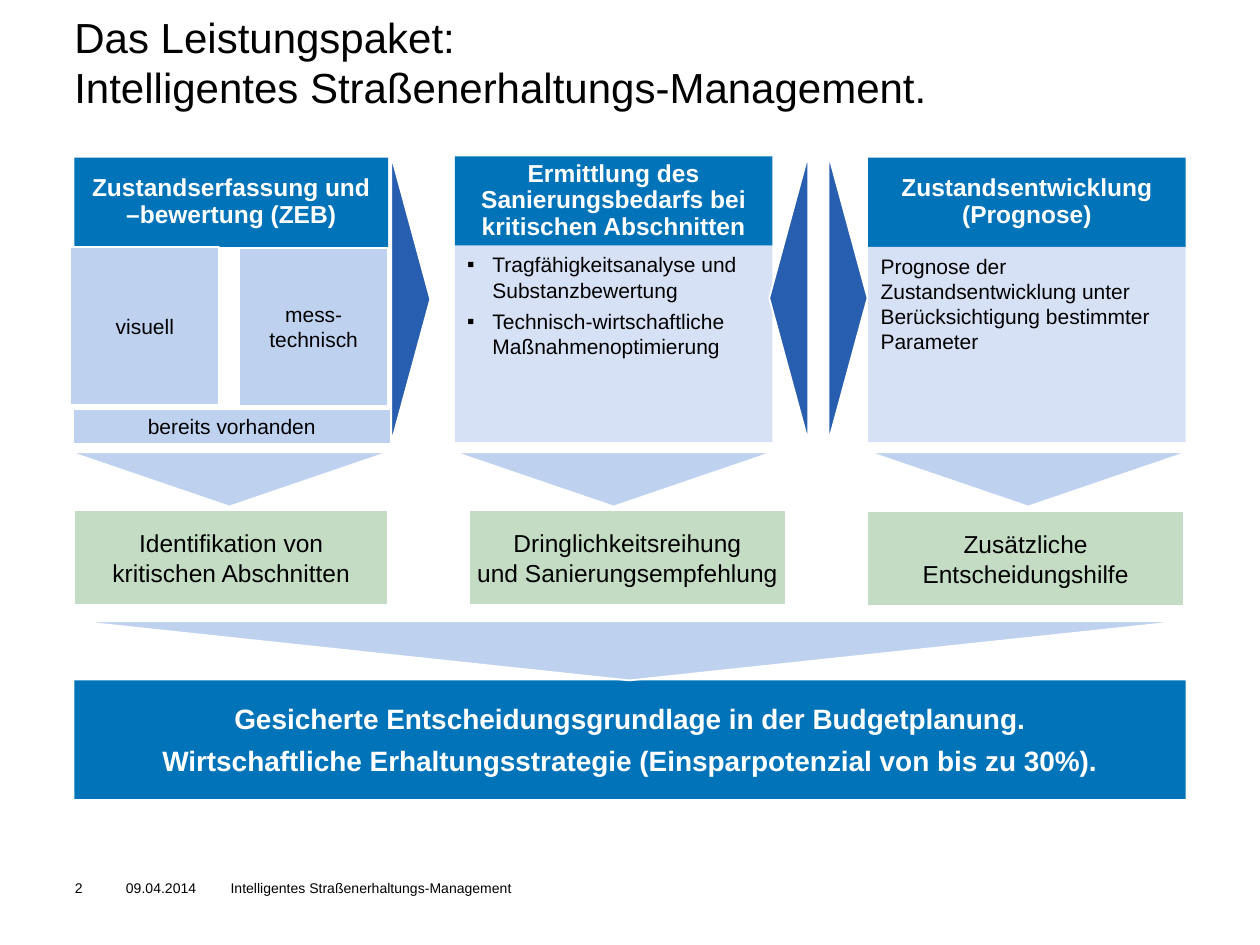
from dataclasses import dataclass

from lxml import etree
from pptx import Presentation
from pptx import util as u
from pptx.dml.color import RGBColor
from pptx.enum import shapes, text
from pptx.oxml import ns

COLS, ROWS = 100, 75
LEFT, MID, RIGHT = 5.9, 36.1, 68.9
HEAD, BODY, DOWN, GOAL, BAND, FOOT = 12.5, 19.6, 35.9, 40.5, 54, 69.4
WIDE = 25.2


@dataclass(frozen=True)
class Theme:
    font: str = "Arial"
    black: str = "000000"
    white: str = "FFFFFF"
    blue: str = "0073B9"
    navy: str = "285EAF"
    sky: str = "BED2F0"
    pale: str = "D7E1F5"
    green: str = "C3DCC3"
    title: float = 24
    band: float = 16
    head: float = 14
    body: float = 12
    foot: float = 8


@dataclass(frozen=True)
class Area:
    col: float
    row: float
    wide: float
    high: float


@dataclass(frozen=True)
class Style:
    fill: str
    size: float
    color: str = "000000"
    bold: bool = False
    edge: bool = False
    wrap: bool = True
    align: text.PP_ALIGN = text.PP_ALIGN.CENTER
    anchor: text.MSO_ANCHOR = text.MSO_ANCHOR.MIDDLE
    space: float = 1.0
    gap: float = 0
    bullet: str = ""


@dataclass(frozen=True)
class Box:
    area: Area
    words: str
    style: Style


@dataclass(frozen=True)
class Arrow:
    area: Area
    turn: int
    fill: str


T = Theme()
HEADER = Style(T.blue, T.head, T.white, bold=True, space=0.9)
BANNER = Style(T.blue, T.band, T.white, bold=True, gap=4.8)
PART = Style(T.sky, T.body, edge=True, wrap=False)
RESULT = Style(T.green, T.head, edge=True, wrap=False)
NOTE = Style(T.pale, T.body, align=text.PP_ALIGN.LEFT, anchor=text.MSO_ANCHOR.TOP)
LIST = Style(T.pale, T.body, align=text.PP_ALIGN.LEFT, anchor=text.MSO_ANCHOR.TOP,
             gap=3.6, bullet="▪")

BOXES = [
    Box(Area(LEFT, HEAD, 24.9, 7.1), "Zustandserfassung und –bewertung (ZEB)", HEADER),
    Box(Area(5.6, BODY, 11.8, 12.5), "visuell", PART),
    Box(Area(19, 19.7, 11.8, 12.5), "mess-\ntechnisch", PART),
    Box(Area(5.8, 32.5, WIDE, 2.7), "bereits vorhanden", PART),
    Box(Area(RIGHT, HEAD, WIDE, 7.1), "Zustandsentwicklung (Prognose)", HEADER),
    Box(Area(RIGHT, BODY, WIDE, 15.5),
        "Prognose der Zustandsentwicklung unter Berücksichtigung bestimmter Parameter", NOTE),
    Box(Area(MID, 12.4, WIDE, 7.1),
        "Ermittlung des Sanierungsbedarfs bei kritischen Abschnitten", HEADER),
    Box(Area(MID, 19.5, WIDE, 15.6),
        "Tragfähigkeitsanalyse und Substanzbewertung\n"
        "Technisch-wirtschaftliche Maßnahmenoptimierung", LIST),
    Box(Area(LEFT, BAND, 88.2, 9.4),
        "Gesicherte Entscheidungsgrundlage in der Budgetplanung.\n"
        "Wirtschaftliche Erhaltungsstrategie (Einsparpotenzial von bis zu 30%).", BANNER),
    Box(Area(LEFT, GOAL, 24.9, 7.5), "Identifikation von\vkritischen Abschnitten", RESULT),
    Box(Area(37.2, GOAL, WIDE, 7.5), "Dringlichkeitsreihung\nund Sanierungsempfehlung", RESULT),
    Box(Area(68.8, 40.6, WIDE, 7.5), "Zusätzliche\vEntscheidungshilfe", RESULT),
]
ARROWS = [
    *(Arrow(Area(col, DOWN, WIDE, 4.3), 180, T.sky) for col in (5.6, MID, 69)),
    Arrow(Area(LEFT, 49.3, 88.1, 4.7), 180, T.sky),
    Arrow(Area(21.2, 22.2, 22.8, 3.1), 90, T.navy),
    Arrow(Area(55.9, 22.1, 22.8, 3.1), 90, T.navy),
    Arrow(Area(51.2, 22.1, 22.8, 3.1), 270, T.navy),
]
FOOTERS = [
    (Area(18.3, FOOT, 39.2, 5.6), "Intelligentes Straßenerhaltungs-Management", text.PP_ALIGN.LEFT),
    (Area(2.5, FOOT, 7.5, 3.5), "2", text.PP_ALIGN.CENTER),
    (Area(10, FOOT, 8.3, 3.9), "09.04.2014", text.PP_ALIGN.LEFT),
]

deck = Presentation()
deck.slide_width, deck.slide_height = u.Inches(10), u.Inches(7.5)


def place(area: Area) -> tuple[int, int, int, int]:
    unit_x, unit_y = deck.slide_width / COLS, deck.slide_height / ROWS
    return (round(area.col * unit_x), round(area.row * unit_y),
            round(area.wide * unit_x), round(area.high * unit_y))


def inset(frame, left: float, top: float, right: float, bottom: float) -> None:
    frame.margin_left, frame.margin_top = u.Inches(left), u.Inches(top)
    frame.margin_right, frame.margin_bottom = u.Inches(right), u.Inches(bottom)


def ink(para, size: float, color: str = T.black, bold: bool = False) -> None:
    for run in para.runs:
        run.font.name, run.font.size, run.font.bold = T.font, u.Pt(size), bold
        run.font.color.rgb = RGBColor.from_string(color)


def mark(para, sign: str) -> None:
    props = para._p.get_or_add_pPr()
    props.set("marL", str(u.Inches(0.2)))
    props.set("indent", str(u.Inches(-0.2)))
    etree.SubElement(props, ns.qn("a:buFont")).set("typeface", T.font)
    etree.SubElement(props, ns.qn("a:buChar")).set("char", sign)


def solid(slide, kind: shapes.MSO_SHAPE, area: Area, fill: str, edge: bool):
    shape = slide.shapes.add_shape(kind, *place(area))
    shape.shadow.inherit = False
    shape.fill.solid()
    shape.fill.fore_color.rgb = RGBColor.from_string(fill)
    if edge:
        shape.line.color.rgb = RGBColor.from_string(T.white)
        shape.line.width = u.Pt(1)
    else:
        shape.line.fill.background()
    return shape


def draw_box(slide, box: Box) -> None:
    style = box.style
    shape = solid(slide, shapes.MSO_SHAPE.RECTANGLE, box.area, style.fill, style.edge)
    frame = shape.text_frame
    frame.text = box.words
    frame.word_wrap, frame.vertical_anchor = style.wrap, style.anchor
    inset(frame, 0.1, 0.05, 0.1, 0.05)
    for index, para in enumerate(frame.paragraphs):
        para.alignment, para.line_spacing = style.align, style.space
        if index and style.gap:
            para.space_before = u.Pt(style.gap)
        if style.bullet:
            mark(para, style.bullet)
        ink(para, style.size, style.color, style.bold)


def draw_arrow(slide, arrow: Arrow) -> None:
    shape = solid(slide, shapes.MSO_SHAPE.ISOSCELES_TRIANGLE, arrow.area, arrow.fill, True)
    shape.rotation = arrow.turn


def draw_title(slide, area: Area, words: str) -> None:
    title = slide.shapes.title
    title.left, title.top, title.width, title.height = place(area)
    frame = title.text_frame
    frame.text = words
    frame.word_wrap, frame.auto_size = True, text.MSO_AUTO_SIZE.NONE
    frame.vertical_anchor = text.MSO_ANCHOR.MIDDLE
    inset(frame, 0, 0, 0, 0)
    frame.paragraphs[0].alignment = text.PP_ALIGN.LEFT
    ink(frame.paragraphs[0], T.title)


def draw_foot(slide, area: Area, words: str, align: text.PP_ALIGN) -> None:
    frame = slide.shapes.add_textbox(*place(area)).text_frame
    frame.text, frame.word_wrap = words, True
    inset(frame, 0, 0.04, 0, 0)
    frame.paragraphs[0].alignment = align
    ink(frame.paragraphs[0], T.foot)


def main() -> None:
    slide = deck.slides.add_slide(deck.slide_layouts[5])
    draw_title(slide, Area(LEFT, 0, 88, 9.8),
               "Das Leistungspaket:\vIntelligentes Straßenerhaltungs-Management.")
    for box in BOXES:
        draw_box(slide, box)
    for arrow in ARROWS:
        draw_arrow(slide, arrow)
    for area, words, align in FOOTERS:
        draw_foot(slide, area, words, align)
    deck.save("out.pptx")


if __name__ == "__main__":
    main()
